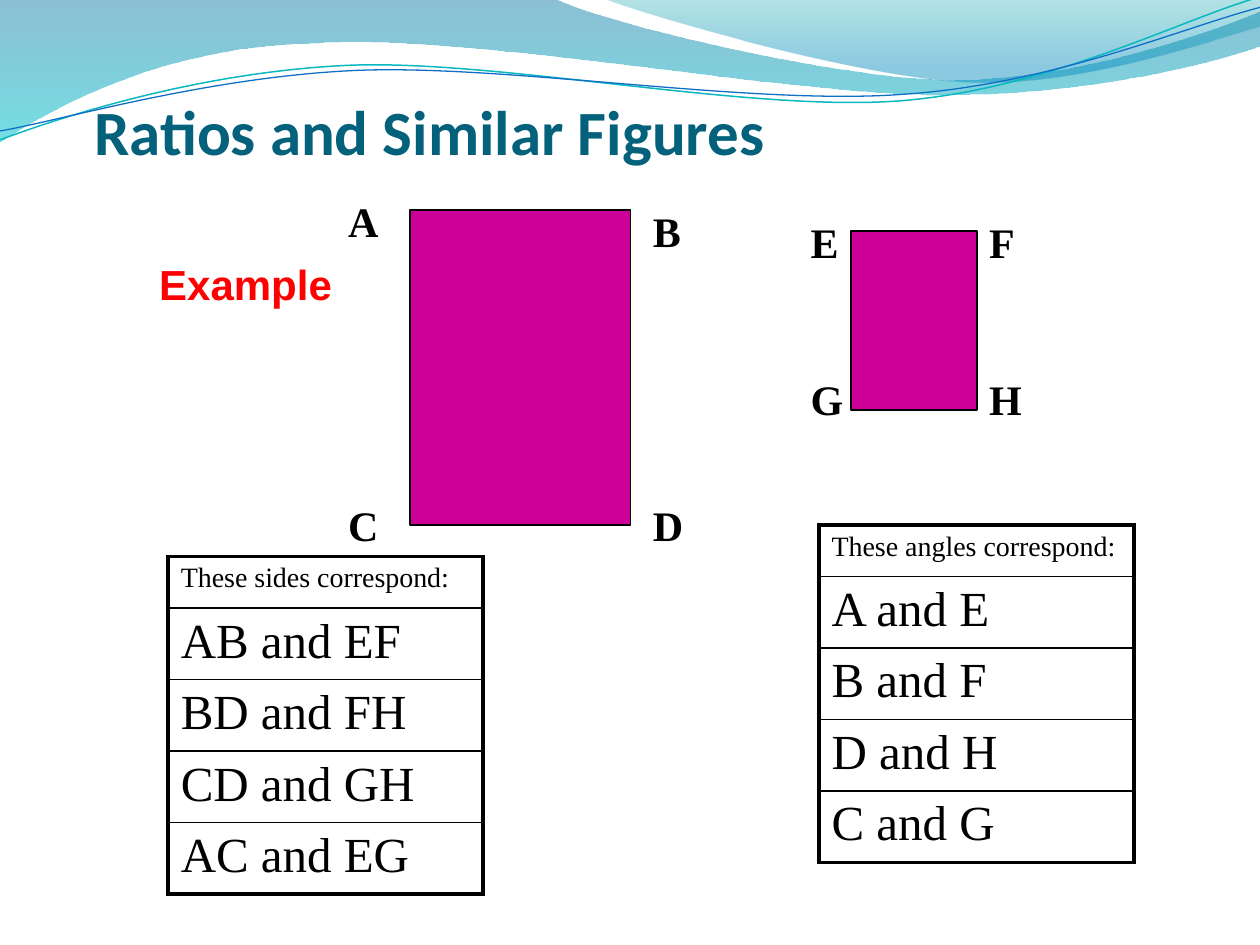
"""Builds the slide on ratios and similar figures."""
from lxml import etree
from pptx import Presentation
from pptx import util as u
from pptx.dml.color import RGBColor
from pptx.enum import shapes, text
from pptx.oxml.ns import qn

COLORS = {
    "title": "04617B", "example": "FF0000", "ink": "000000", "figure": "CC0099",
    "deep": "0074A1", "aqua": "00C6CF", "teal": "00A1A9", "sky": "008BBF",
    "teal_line": "0AB8BF", "blue_line": "0F6FC6",
}
SERIF = "Times New Roman"
WAVE_TILT = -2.7

BANDS = [
    ((0, 0), [
        [(11.18, -0.03)],
        [(12.09, 0.43), (16.87, 1.6), (19.25, 1.6)],
        [(21.67, 1.6), (24.33, 0.66), (25.4, 0.23)],
        [(25.43, 0.91)],
        [(24.97, 1.12), (22.1, 1.93), (18.95, 1.91)],
        [(15.8, 1.91), (9.7, 0.71), (6.53, 0.86)],
        [(3.28, 0.91), (1.17, 2.11), (-0.03, 2.87)],
        [(0, 0)],
    ], [(0, "deep", 45), (1, "aqua", 55)]),
    ((12.17, -0.03), [
        [(12.93, 0.28), (17.32, 1.57), (19.53, 1.65)],
        [(21.74, 1.75), (24.41, 0.81), (25.4, 0.53)],
        [(25.4, 0)],
        [(12.17, -0.03)],
    ], [(0, "teal", 30), (0.8, "sky", 45)]),
]
WAVES = [
    ((-0.05, 2.22), [
        [(1.19, 1.82), (4.02, 1.04), (7.05, 1.05)],
        [(10.05, 1.07), (15.02, 2.37), (18.08, 2.29)],
        [(21.13, 2.2), (23.86, 0.91), (25.41, 0.55)],
    ], "teal_line", 0.85),
    ((-0.04, 2.04), [
        [(1.16, 1.9), (4.17, 1.15), (7.2, 1.16)],
        [(10.25, 1.18), (15.13, 2.25), (18.19, 2.16)],
        [(21.22, 2.1), (23.93, 1.06), (25.45, 0.75)],
    ], "blue_line", 0.75),
]
FIGURES = [(8.26, 4.23, 4.45, 6.35), (17.15, 4.66, 2.54, 3.6)]
CORNERS = [
    ("A", 6.77, 3.81), ("E", 16.09, 4.23), ("C", 6.77, 9.95), ("F", 19.69, 4.23),
    ("D", 12.91, 9.95), ("G", 16.09, 7.41), ("H", 19.69, 7.41), ("B", 12.91, 4.02),
]
CORRESPONDENCES = [
    (3.39, 11.22, ["These sides correspond:", "AB and EF", "BD and FH",
                   "CD and GH", "AC and EG"]),
    (16.51, 10.58, ["These angles correspond:", "A and E", "B and F",
                    "D and H", "C and G"]),
]


def rgb(name):
    """Return the named colour."""
    return RGBColor.from_string(COLORS[name])


def add_outline(slide, start, segments, closed):
    """Add a freeform of straight lines and cubic Bezier curves."""
    builder = slide.shapes.build_freeform(*map(u.Cm, start))
    builder.add_line_segments([tuple(map(u.Cm, segment[-1])) for segment in segments],
                              close=closed)
    outline = builder.convert_to_shape()
    outline.shadow.inherit = False
    strokes = list(outline._element.spPr.iter(qn("a:lnTo")))
    for stroke, segment in zip(strokes, segments):
        if len(segment) == 3:
            curve = etree.Element(qn("a:cubicBezTo"))
            for x, y in segment:
                etree.SubElement(curve, qn("a:pt"), x=str(u.Cm(x) - outline.left),
                                 y=str(u.Cm(y) - outline.top))
            stroke.getparent().replace(stroke, curve)
    return outline


def add_band(slide, start, segments, stops):
    """Add a translucent band with a gradient from top to bottom."""
    band = add_outline(slide, start, segments, True)
    band.line.fill.background()
    band.fill.gradient()
    band.fill.gradient_angle = 270
    for stop, (position, color, _) in zip(band.fill.gradient_stops, stops):
        stop.position = position
        stop.color.rgb = rgb(color)
    fills = band._element.spPr.iter(qn("a:srgbClr"))
    for fill, (_, _, opacity) in zip(fills, stops):
        etree.SubElement(fill, qn("a:alpha"), val=str(opacity * 1000))


def add_wave(slide, start, segments, color, width):
    """Add a thin, slightly tilted wavy line."""
    wave = add_outline(slide, start, segments, False)
    wave.rotation = WAVE_TILT
    wave.fill.background()
    wave.line.color.rgb = rgb(color)
    wave.line.width = u.Pt(width)


def add_figure(slide, left, top, width, height):
    """Add one of the similar rectangles."""
    figure = slide.shapes.add_shape(shapes.MSO_SHAPE.RECTANGLE,
                                    *map(u.Cm, (left, top, width, height)))
    figure.shadow.inherit = False
    figure.fill.solid()
    figure.fill.fore_color.rgb = rgb("figure")
    figure.line.color.rgb = rgb("ink")
    figure.line.width = u.Pt(1)


def style(paragraph, size, font, color, bold=False, space_before=0):
    """Format the runs and the space before, in percent of a line."""
    for run in paragraph.runs:
        run.font.size = u.Pt(size)
        run.font.name = font
        run.font.bold = bold
        run.font.color.rgb = rgb(color)
    if space_before:
        spacing = etree.Element(qn("a:spcBef"))
        etree.SubElement(spacing, qn("a:spcPct"), val=str(space_before * 1000))
        paragraph._p.get_or_add_pPr().insert(0, spacing)


def add_text(slide, wording, left, top, width, height):
    """Add a wrapping text box and return its frame."""
    frame = slide.shapes.add_textbox(*map(u.Cm, (left, top, width, height))).text_frame
    frame.word_wrap = True
    frame.text = wording
    return frame


def add_title(slide, wording):
    """Add the slide title."""
    frame = add_text(slide, wording, 1.9, 1.7, 21.6, 1.69)
    frame.margin_left = frame.margin_right = frame.margin_bottom = 0
    frame.vertical_anchor = text.MSO_ANCHOR.BOTTOM
    style(frame.paragraphs[0], 36, "Calibri", "title", True)


def add_label(slide, wording, left, top, width=1.27, font=SERIF, color="ink"):
    """Add a bold label."""
    frame = add_text(slide, wording, left, top, width, 1.27)
    frame.auto_size = text.MSO_AUTO_SIZE.SHAPE_TO_FIT_TEXT
    style(frame.paragraphs[0], 24, font, color, True, 50)


def add_borders(cell, widths):
    """Draw the left, right, top and bottom borders of a cell."""
    properties = cell._tc.get_or_add_tcPr()
    for index, (side, width) in enumerate(zip("LRTB", widths)):
        border = etree.Element(qn(f"a:ln{side}"), w=str(u.Pt(width)))
        paint = etree.SubElement(border, qn("a:solidFill"))
        etree.SubElement(paint, qn("a:srgbClr"), val=COLORS["ink"])
        properties.insert(index, border)


def add_correspondence(slide, left, top, entries):
    """Add a one-column table with a heading and matching parts."""
    last = len(entries) - 1
    heights = [1.04] + [1.44] * last
    table = slide.shapes.add_table(
        len(entries), 1, *map(u.Cm, (left, top, 6.35, sum(heights)))).table
    table.first_row = table.horz_banding = False
    for index, (entry, height) in enumerate(zip(entries, heights)):
        table.rows[index].height = u.Cm(height)
        cell = table.cell(index, 0)
        cell.text_frame.text = entry
        cell.fill.background()
        style(cell.text_frame.paragraphs[0], 28 if index else 16, SERIF, "ink",
              space_before=20)
        add_borders(cell, (2.25, 2.25, 1 if index else 2.25, 2.25 if index == last else 1))


def main():
    """Build and save the slide."""
    deck = Presentation()
    deck.slide_width, deck.slide_height = u.Cm(25.4), u.Cm(19.05)
    slide = deck.slides.add_slide(deck.slide_layouts[6])
    for band in BANDS:
        add_band(slide, *band)
    for wave in WAVES:
        add_wave(slide, *wave)
    add_title(slide, "Ratios and Similar Figures")
    add_label(slide, "Example", 2.96, 5.08, 4.23, "Arial", "example")
    for figure in FIGURES:
        add_figure(slide, *figure)
    for corner in CORNERS:
        add_label(slide, *corner)
    for correspondence in CORRESPONDENCES:
        add_correspondence(slide, *correspondence)
    deck.save("out.pptx")


if __name__ == "__main__":
    main()
